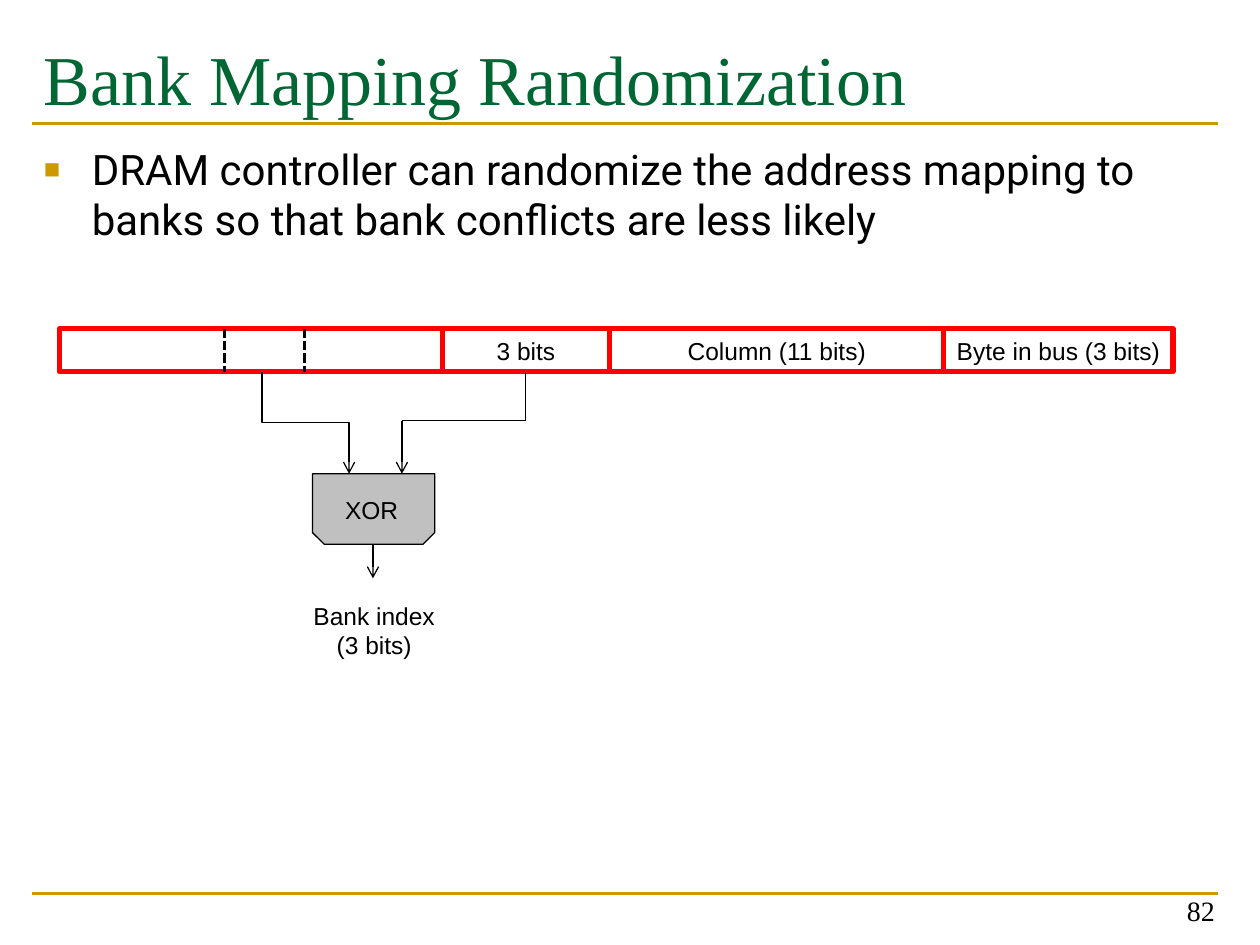
from lxml import etree
from pptx import Presentation
from pptx import util as u
from pptx.dml.color import RGBColor
from pptx.enum import dml, shapes, text
from pptx.oxml import ns

COLORS = {"title": "006633", "gold": "CC9900", "ink": "000000",
          "field": "FF0000", "gate": "C0C0C0"}
ALIGN = text.PP_ALIGN
ANCHOR = text.MSO_ANCHOR


def rgb(name):
    return RGBColor.from_string(COLORS[name])


def add_xml(parent, tag, **attributes):
    return etree.SubElement(parent, ns.qn(tag), attributes)


def write(frame, words, size=14, font="Arial", color="ink", align=ALIGN.CENTER,
          anchor=ANCHOR.TOP, side=0.1, top=0.05):
    """Put formatted text in a text frame and return its paragraph."""
    frame.word_wrap = True
    frame.vertical_anchor = anchor
    frame.margin_left = frame.margin_right = u.Inches(side)
    frame.margin_top = u.Inches(top)
    paragraph = frame.paragraphs[0]
    paragraph.alignment = align
    run = paragraph.add_run()
    run.text = words
    run.font.size = u.Pt(size)
    run.font.name = font
    run.font.color.rgb = rgb(color)
    return paragraph


class Board:
    """Holds the current slide and draws each kind of element on it."""

    def __init__(self, slide):
        self.items = slide.shapes

    def label(self, box, words, **style):
        textbox = self.items.add_textbox(*map(u.Inches, box))
        return write(textbox.text_frame, words, **style)

    def bullet(self, box, words, **style):
        paragraph = self.label(box, words, align=ALIGN.LEFT, **style)
        paragraph.space_before = u.Pt(4.8)
        props = paragraph._p.get_or_add_pPr()
        indent = u.Inches(0.38)
        props.set("marL", str(indent))
        props.set("indent", str(-indent))
        add_xml(add_xml(props, "a:buClr"), "a:srgbClr", val=COLORS["gold"])
        add_xml(props, "a:buSzPct", val="65000")
        add_xml(props, "a:buFont", typeface="Arial")
        add_xml(props, "a:buChar", char="■")

    def block(self, kind, box, line, width, fill=None):
        block = self.items.add_shape(kind, *map(u.Inches, box))
        block.shadow.inherit = False
        block.line.color.rgb = rgb(line)
        block.line.width = u.Pt(width)
        if fill:
            block.fill.solid()
            block.fill.fore_color.rgb = rgb(fill)
        else:
            block.fill.background()
        return block

    def line(self, start, end, color="ink", width=0.75, dash=None, arrow=False,
             kind=shapes.MSO_CONNECTOR.STRAIGHT):
        line = self.items.add_connector(kind, *map(u.Inches, start + end))
        line.line.color.rgb = rgb(color)
        line.line.width = u.Pt(width)
        if dash:
            line.line.dash_style = dash
        if arrow:
            add_xml(line.line._get_or_add_ln(), "a:tailEnd", type="arrow")
        add_xml(line._element.spPr, "a:effectLst")
        return line


def main():
    deck = Presentation()
    deck.slide_width, deck.slide_height = u.Inches(10), u.Inches(7.5)
    board = Board(deck.slides.add_slide(deck.slide_layouts[6]))

    # Frame rules, title, bullet and page number
    for rule_y in (7.09, 0.98):
        board.line((0.25, rule_y), (9.67, rule_y), color="gold", width=1.5)
    board.label((0.25, 0.17, 9.42, 1.17), "Bank Mapping Randomization", size=40,
                font="Times New Roman", color="title", align=ALIGN.LEFT, top=0.11)
    board.bullet((0.25, 1.09, 9.42, 5.68),
                 "DRAM controller can randomize the address mapping to banks "
                 "so that bank conflicts are less likely", size=24, font="Roboto")
    board.label((7.41, 6.91, 2.33, 0.5), "82", size=16, font="Times New Roman",
                align=ALIGN.RIGHT, anchor=ANCHOR.BOTTOM)

    # Address fields, side by side
    address_top, address_height = 2.61, 0.34
    address_bottom = address_top + address_height
    field_left = 0.47
    for field_width, words in ((3.04, ""), (1.33, "3 bits"),
                               (2.65, "Column (11 bits)"),
                               (1.82, "Byte in bus (3 bits)")):
        field = board.block(shapes.MSO_SHAPE.RECTANGLE,
                            (field_left, address_top, field_width, address_height),
                            "field", 3)
        if words:
            write(field.text_frame, words, anchor=ANCHOR.MIDDLE, side=0.05)
        field_left += field_width

    # Bits picked out of the first field
    for divider_x in (1.78, 2.42):
        board.line((divider_x, address_top), (divider_x, address_bottom),
                   width=1.75, dash=dml.MSO_LINE.SQUARE_DOT)

    # Left input: an elbow turned to leave downwards
    row_input = board.line((2.83, 3.01), (2.02, 3.7), arrow=True,
                           kind=shapes.MSO_CONNECTOR.ELBOW)
    row_input._element.spPr.find(ns.qn("a:xfrm")).set("rot", str(270 * 60000))

    # XOR gate
    gate_top, gate_height = 3.76, 0.56
    gate = board.block(shapes.MSO_SHAPE.SNIP_2_SAME_RECTANGLE,
                       (2.48, gate_top, 0.97, gate_height), "ink", 0.75, fill="gate")
    gate.rotation = 180
    board.label((2.42, 3.88, 1.06, 0.34), "XOR")

    # Right input, drawn as three joined lines
    bank_route = [(4.17, address_bottom), (4.17, 3.34), (3.19, 3.34), (3.19, gate_top)]
    for start, end in zip(bank_route, bank_route[1:]):
        board.line(start, end, arrow=end == bank_route[-1])

    # Output
    board.line((2.96, gate_top + gate_height), (2.96, 4.59), arrow=True)
    board.label((2.3, 4.72, 1.34, 0.57), "Bank index (3 bits)")

    deck.save("out.pptx")


if __name__ == "__main__":
    main()
